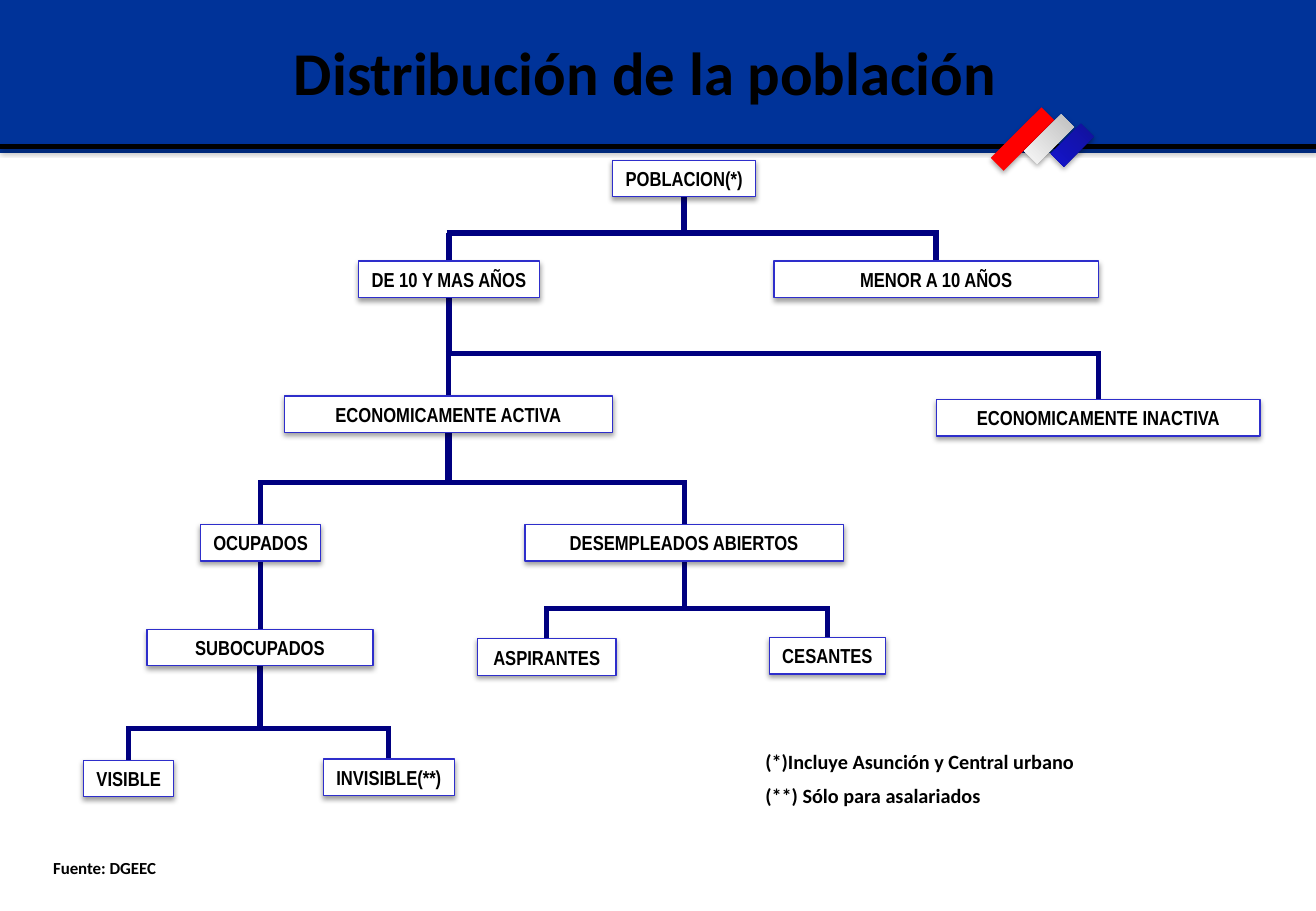
from lxml.etree import SubElement
from pptx import Presentation
from pptx.dml.color import RGBColor
from pptx.enum.shapes import MSO_CONNECTOR as Link, MSO_SHAPE as Form
from pptx.enum.text import MSO_ANCHOR as Anchor, PP_ALIGN as Align
from pptx.oxml.ns import qn
from pptx.util import Inches, Pt

THEME = {
    "band": RGBColor.from_string("003399"),
    "ink": RGBColor.from_string("000000"),
    "paper": RGBColor.from_string("FFFFFF"),
    "edge": RGBColor.from_string("2E2ECB"),
    "branch": RGBColor.from_string("000080"),
    "red": RGBColor.from_string("FF0000"),
    "silver": (RGBColor.from_string("BEBEBE"), RGBColor.from_string("F8F8F8")),
    "blue": (RGBColor.from_string("12129A"), RGBColor.from_string("1414CC")),
    "title": {"name": "Calibri", "size": Pt(36), "bold": True},
    "node": {"name": "Arial Narrow", "size": Pt(12), "bold": True},
    "note": {"name": "Calibri", "size": Pt(12), "bold": True},
    "source": {"name": "Calibri", "size": Pt(10), "bold": True},
}


def write(frame, lines, style, align):
    for index, line in enumerate(lines):
        paragraph = frame.paragraphs[0] if index == 0 else frame.add_paragraph()
        paragraph.text = line
        paragraph.alignment = align
        for name, value in THEME[style].items():
            setattr(paragraph.font, name, value)
        paragraph.font.color.rgb = THEME["ink"]


def link(x1, y1, x2, y2, color, weight):
    line = slide.shapes.add_connector(
        Link.STRAIGHT, Inches(x1), Inches(y1), Inches(x2), Inches(y2))
    line.line.color.rgb = THEME[color]
    line.line.width = Pt(weight)
    SubElement(line.element.spPr, qn("a:effectLst"))
    return line


prs = Presentation()
prs.slide_width, prs.slide_height = Inches(10.83), Inches(7.5)
slide = prs.slides.add_slide(prs.slide_layouts[5])

title = slide.shapes.title
title.left, title.top, title.width, title.height = map(Inches, (0.24, 0.24, 10.14, 0.7))
title.text_frame.vertical_anchor = Anchor.MIDDLE
write(title.text_frame, ["Distribución de la población"], "title", Align.CENTER)

band = slide.shapes.add_shape(Form.RECTANGLE, 0, 0, prs.slide_width, Inches(1.26))
band.shadow.inherit = False
band.fill.solid()
band.fill.fore_color.rgb = THEME["band"]
band.line.fill.background()
title.element.addprevious(band.element)
rule = link(0, 1.21, 10.83, 1.21, "ink", 3)
shadowed = [(rule, 35)]

for left, top, height, color in [
    (8.34, 0.85, 0.59, "red"), (8.56, 0.93, 0.43, "silver"), (8.75, 1.02, 0.35, "blue"),
]:
    stripe = slide.shapes.add_shape(
        Form.RECTANGLE, Inches(left), Inches(top), Inches(0.15), Inches(height))
    stripe.rotation = 45
    stripe.shadow.inherit = False
    stripe.line.fill.background()
    if color == "red":
        stripe.fill.solid()
        stripe.fill.fore_color.rgb = THEME[color]
    else:
        stripe.fill.gradient()
        stripe.fill.gradient_angle = 270
        for stop, shade in zip(stripe.fill.gradient_stops, THEME[color]):
            stop.color.rgb = shade
    shadowed.append((stripe, 35))

NODE_HEIGHT = 0.3
nodes = {
    "POBLACION(*)": (5.04, 1.32, 1.18),
    "DE 10 Y MAS AÑOS": (2.95, 2.15, 1.49),
    "MENOR A 10 AÑOS": (6.37, 2.15, 2.67),
    "ECONOMICAMENTE ACTIVA": (2.34, 3.26, 2.7),
    "ECONOMICAMENTE INACTIVA": (7.71, 3.29, 2.66),
    "OCUPADOS": (1.65, 4.32, 0.99),
    "DESEMPLEADOS ABIERTOS": (4.32, 4.32, 2.62),
    "SUBOCUPADOS": (1.21, 5.18, 1.86),
    "ASPIRANTES": (3.93, 5.26, 1.14),
    "CESANTES": (6.33, 5.25, 0.96),
    "VISIBLE": (0.69, 6.26, 0.74),
    "INVISIBLE(**)": (2.66, 6.25, 1.08),
}
center = {name: left + width / 2 for name, (left, top, width) in nodes.items()}

branches = [
    ("POBLACION(*)", 1.92, 3.75, 3.75, ["DE 10 Y MAS AÑOS", "MENOR A 10 AÑOS"]),
    ("DE 10 Y MAS AÑOS", 2.91, 3.75, 3, ["ECONOMICAMENTE ACTIVA", "ECONOMICAMENTE INACTIVA"]),
    ("ECONOMICAMENTE ACTIVA", 3.97, 3.75, 3, ["OCUPADOS", "DESEMPLEADOS ABIERTOS"]),
    ("OCUPADOS", 5.18, 3, 3, ["SUBOCUPADOS"]),
    ("DESEMPLEADOS ABIERTOS", 5.01, 3, 3, ["ASPIRANTES", "CESANTES"]),
    ("SUBOCUPADOS", 6, 3, 3, ["VISIBLE", "INVISIBLE(**)"]),
]
for parent, level, stem, weight, children in branches:
    link(center[parent], nodes[parent][1] + NODE_HEIGHT, center[parent], level, "branch", stem)
    if len(children) > 1:
        first, last = center[children[0]], center[children[-1]]
        link(first - 0.02, level, last + 0.02, level, "branch", weight)
        for child in children:
            link(center[child], level, center[child], nodes[child][1], "branch", weight)

for name, (left, top, width) in nodes.items():
    node = slide.shapes.add_shape(
        Form.RECTANGLE, Inches(left), Inches(top), Inches(width), Inches(NODE_HEIGHT))
    node.shadow.inherit = False
    node.fill.solid()
    node.fill.fore_color.rgb = THEME["paper"]
    node.line.color.rgb = THEME["edge"]
    node.line.width = Pt(0.75)
    node.text_frame.word_wrap = False
    node.text_frame.vertical_anchor = Anchor.MIDDLE
    write(node.text_frame, [name], "node", Align.CENTER)
    shadowed.append((node, 38))

for shape, opacity in shadowed:
    effects = shape.element.spPr.find(qn("a:effectLst"))
    shadow = SubElement(effects, qn("a:outerShdw"), blurRad=str(Pt(3.1)),
                        dist=str(Pt(1.7)), dir="5400000", rotWithShape="0")
    shade = SubElement(shadow, qn("a:srgbClr"), val=str(THEME["ink"]))
    SubElement(shade, qn("a:alpha"), val=str(opacity * 1000))

notes = slide.shapes.add_textbox(*map(Inches, (6.2, 6.12, 3.86, 0.6))).text_frame
notes.word_wrap = True
write(notes, ["(*)Incluye Asunción y Central urbano", "(**) Sólo para asalariados"],
      "note", Align.LEFT)
notes.paragraphs[1].space_before = Pt(6)

source = slide.shapes.add_textbox(*map(Inches, (0, 7.03, 1.72, 0.25))).text_frame
source.word_wrap = True
write(source, ["Fuente: DGEEC"], "source", Align.CENTER)
source.paragraphs[0].line_spacing = 0.9

prs.save("out.pptx")
